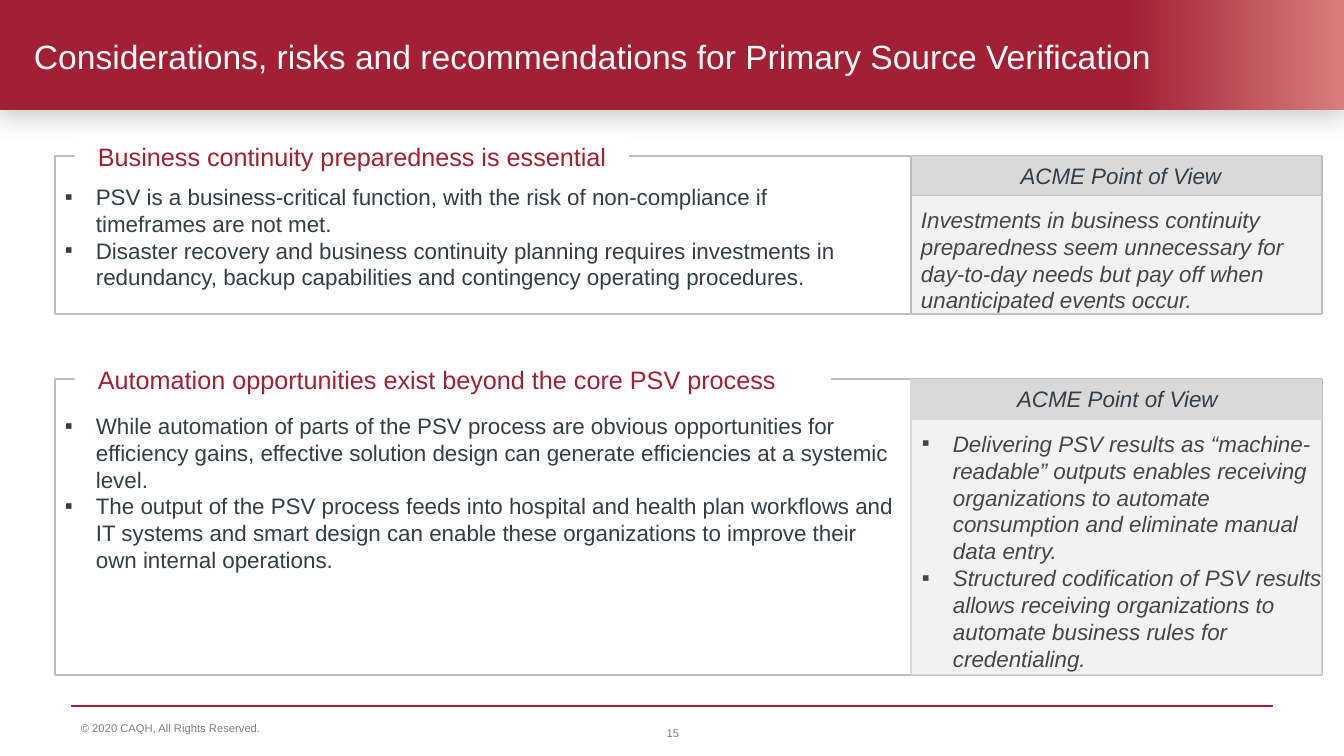
from lxml import etree
from pptx import Presentation
from pptx import util as u
from pptx.dml.color import RGBColor
from pptx.enum import shapes, text
from pptx.oxml import parse_xml
from pptx.oxml.ns import qn

PX = 914400 / 100.8
NS = 'xmlns:a="http://schemas.openxmlformats.org/drawingml/2006/main"'
COLORS = {
    "white": "FFFFFF", "crimson": "A31F34", "rose": "D77E7C", "rule": "A32136",
    "slate": "323E48", "charcoal": "444647", "muted": "808080",
    "border": "BFBFBF", "header": "D9D9D9", "panel": "F2F2F2",
}


def color(name):
    return RGBColor.from_string(COLORS[name])


def add_box(place, lines=(), fill=None, line=None, width=0.75, bullet=False, indent=0,
            anchor="TOP", align="LEFT", ink="slate", **font):
    area = [u.Emu(round(value * PX)) for value in place]
    if fill:
        box = page.shapes.add_shape(shapes.MSO_SHAPE.RECTANGLE, *area)
        box.shadow.inherit = False
        box.fill.solid()
        box.fill.fore_color.rgb = color(fill)
        if line:
            box.line.color.rgb = color(line)
            box.line.width = u.Pt(width)
        else:
            box.line.fill.background()
    else:
        box = page.shapes.add_textbox(*area)
    frame = box.text_frame
    frame.word_wrap = True
    frame.vertical_anchor = text.MSO_ANCHOR[anchor]
    for number, words in enumerate(lines):
        para = frame.add_paragraph() if number else frame.paragraphs[0]
        para.alignment = text.PP_ALIGN[align]
        props = para._p.get_or_add_pPr()
        props.set("marL", str(round(indent * PX)))
        if bullet:
            props.set("indent", str(-round(indent * PX)))
            etree.SubElement(props, qn("a:buFont")).set("typeface", "Arial")
            etree.SubElement(props, qn("a:buChar")).set("char", "▪")
        span = para.add_run()
        span.text = words
        span.font.color.rgb = color(ink)
        for name, value in {"name": "Arial", **font}.items():
            setattr(span.font, name, value)
    return box


deck = Presentation()
deck.slide_width, deck.slide_height = round(1344 * PX), round(756 * PX)
page = deck.slides.add_slide(deck.slide_layouts[6])

# Footer
small = {"size": u.Pt(8), "ink": "muted"}
add_box((71, 709, 496, 31), ["© 2020 CAQH, All Rights Reserved."], anchor="BOTTOM", **small)
add_box((522, 713, 302, 40), ["15"], anchor="MIDDLE", align="CENTER", **small)
rule = page.shapes.add_connector(
    shapes.MSO_CONNECTOR.STRAIGHT, *[round(value * PX) for value in (71, 706, 1273, 706)])
rule.line.color.rgb = color("rule")
rule.line.width = u.Pt(0.75)
etree.SubElement(rule._element.spPr, qn("a:effectLst"))

# Title banner with fading right end and soft shadow
banner = add_box((0, 0, 1344, 110), fill="crimson")
banner.fill.gradient()
banner.fill.gradient_angle = 0
for stop, position, name in zip(banner.fill.gradient_stops, (0.84, 1), ("crimson", "rose")):
    stop.position = position
    stop.color.rgb = color(name)
effects = banner._element.spPr.find(qn("a:effectLst"))
effects.append(parse_xml(
    f'<a:outerShdw {NS} blurRad="{u.Pt(18)}" dist="{u.Pt(3)}" dir="{102 * 60000}" rotWithShape="0">'
    f'<a:srgbClr val="{COLORS["muted"]}"><a:alpha val="43000"/></a:srgbClr></a:outerShdw>'))
add_box((24, 15, 1297, 82),
        ["Considerations, risks and recommendations for Primary Source Verification"],
        anchor="MIDDLE", ink="white", size=u.Pt(24))

# Sections: framed findings on the left, point of view on the right
sections = [
    {
        "top": 156, "height": 158, "pov_top": 156, "pov_border": "border", "header_border": "border",
        "label": "Business continuity preparedness is essential", "label_width": 554,
        "caption": (999, 157, 244, 37),
        "body": (55, 178, 826, 119),
        "findings": [
            "PSV is a business-critical function, with the risk of non-compliance if timeframes "
            "are not met.",
            "Disaster recovery and business continuity planning requires investments in "
            "redundancy, backup capabilities and contingency operating procedures.",
        ],
        "note": (911, 201, 420, 119), "note_bullet": False,
        "views": [
            "Investments in business continuity preparedness seem unnecessary for day-to-day "
            "needs but pay off when unanticipated events occur.",
        ],
    },
    {
        "top": 379, "height": 296, "pov_top": 380, "pov_border": "header", "header_border": None,
        "label": "Automation opportunities exist beyond the core PSV process", "label_width": 756,
        "caption": (950, 380, 335, 37),
        "body": (55, 407, 856, 173),
        "findings": [
            "While automation of parts of the PSV process are obvious opportunities for "
            "efficiency gains, effective solution design can generate efficiencies at a "
            "systemic level.",
            "The output of the PSV process feeds into hospital and health plan workflows and "
            "IT systems and smart design can enable these organizations to improve their own "
            "internal operations.",
        ],
        "note": (912, 425, 420, 254), "note_bullet": True,
        "views": [
            "Delivering PSV results as “machine-readable” outputs enables receiving "
            "organizations to automate consumption and eliminate manual data entry.",
            "Structured codification of PSV results allows receiving organizations to automate "
            "business rules for credentialing.",
        ],
    },
]
for section in sections:
    top, pov_top = section["top"], section["pov_top"]
    bottom = top + section["height"]
    add_box((55, top, 1267, section["height"]), fill="white", line="border", width=1)
    add_box((75, top - 20, section["label_width"], 40), [section["label"]], fill="white",
            indent=13, ink="crimson", size=u.Pt(18))
    add_box((911, pov_top, 411, bottom - pov_top), fill="panel", line=section["pov_border"])
    add_box((911, pov_top, 411, 40), fill="header", line=section["header_border"])
    add_box(section["caption"], ["ACME Point of View"], align="CENTER",
            size=u.Pt(16), italic=True)
    add_box(section["body"], section["findings"], bullet=True, indent=31, size=u.Pt(16))
    add_box(section["note"], section["views"], bullet=section["note_bullet"],
            indent=31 if section["note_bullet"] else 0, ink="charcoal",
            size=u.Pt(16), italic=True)

deck.save("out.pptx")
